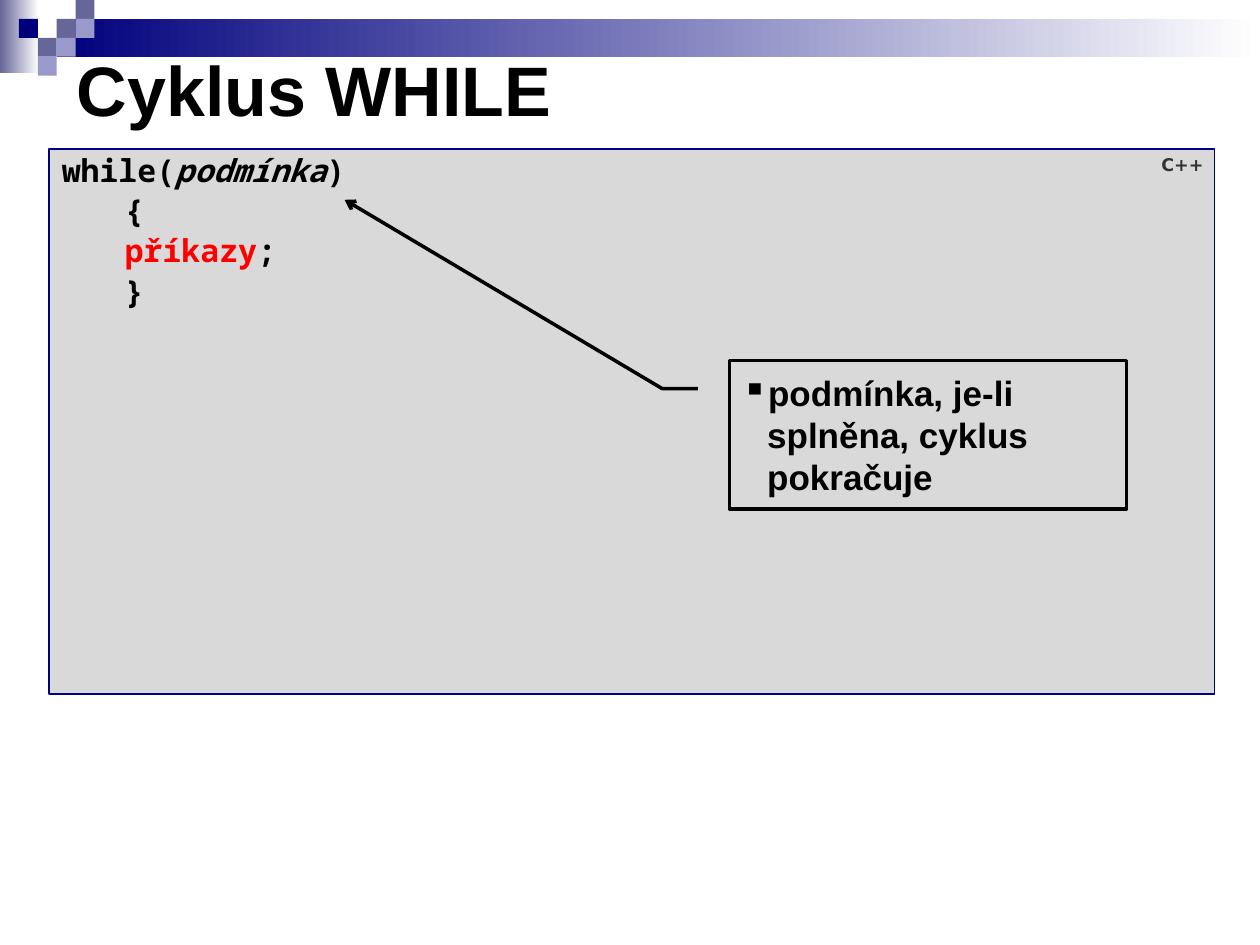
from dataclasses import dataclass

import lxml.etree
import pptx
import pptx.dml.color
import pptx.enum.shapes
import pptx.enum.text
import pptx.oxml.ns
import pptx.util

Inches = pptx.util.Inches
Pt = pptx.util.Pt
MSO_SHAPE = pptx.enum.shapes.MSO_SHAPE
ALIGN = pptx.enum.text.PP_ALIGN
ANCHOR = pptx.enum.text.MSO_ANCHOR
qn = pptx.oxml.ns.qn


@dataclass(frozen=True)
class Theme:
    navy: str = "00007D"
    border: str = "000080"
    slate: str = "666699"
    lilac: str = "9999CC"
    white: str = "FFFFFF"
    panel: str = "D9D9D9"
    ink: str = "000000"
    muted: str = "333333"
    accent: str = "FF0000"
    sans: str = "Arial"
    mono: str = "Noto Sans Mono"
    label: str = "DejaVu Sans"
    title_size: int = 40
    note_size: int = 20
    code_size: int = 18
    label_size: int = 10


@dataclass(frozen=True)
class Box:
    left: float
    top: float
    width: float
    height: float

    def lengths(self) -> list:
        return [Inches(v) for v in (self.left, self.top, self.width, self.height)]


@dataclass(frozen=True)
class Band:
    box: Box
    start: str


@dataclass(frozen=True)
class Square:
    col: int
    row: int
    color: str


@dataclass(frozen=True)
class CodeRun:
    text: str
    color: str
    italic: bool = False


@dataclass(frozen=True)
class CodeLine:
    runs: tuple
    level: int = 0


THEME = Theme()
CELL = 0.15
BANDS = (
    Band(Box(0, 0, 0.31, 0.58), THEME.slate),
    Band(Box(0.45, 0.15, 9.55, 0.3), THEME.navy),
)
SQUARES = (
    Square(3, 1, THEME.slate),
    Square(4, 0, THEME.slate),
    Square(4, 1, THEME.lilac),
    Square(2, 2, THEME.slate),
    Square(1, 1, THEME.navy),
    Square(3, 2, THEME.lilac),
    Square(2, 3, THEME.lilac),
)
CODE = (
    CodeLine((CodeRun("while(", THEME.ink), CodeRun("podmínka", THEME.ink, True),
              CodeRun(")", THEME.ink))),
    CodeLine((CodeRun("{", THEME.ink),), 1),
    CodeLine((CodeRun("příkazy", THEME.accent), CodeRun(";", THEME.ink)), 1),
    CodeLine((CodeRun("}", THEME.ink),), 1),
)


def rgb(color: str):
    return pptx.dml.color.RGBColor.from_string(color)


def style_run(r, size: int, font: str, color: str, italic: bool = False) -> None:
    r.font.size = Pt(size)
    r.font.name = font
    r.font.color.rgb = rgb(color)
    r.font.bold = True
    r.font.italic = italic


def set_indent(p, margin: float, hanging: float, bullet: str = "") -> None:
    pPr = p._p.get_or_add_pPr()
    pPr.set("marL", str(Inches(margin)))
    pPr.set("indent", str(-Inches(hanging)))
    if bullet:
        lxml.etree.SubElement(pPr, qn("a:buChar")).set("char", bullet)
    else:
        lxml.etree.SubElement(pPr, qn("a:buNone"))


def outline(sp, fill: str, line: str, width: float) -> None:
    sp.fill.solid()
    sp.fill.fore_color.rgb = rgb(fill)
    sp.line.color.rgb = rgb(line)
    sp.line.width = Pt(width)


def place(sp, box: Box) -> None:
    sp.left, sp.top, sp.width, sp.height = box.lengths()


def add_plain_rect(s, box: Box):
    sp = s.shapes.add_shape(MSO_SHAPE.RECTANGLE, *box.lengths())
    sp.shadow.inherit = False
    sp.line.fill.background()
    return sp


def add_band(s, band: Band) -> None:
    sp = add_plain_rect(s, band.box)
    sp.fill.gradient()
    sp.fill.gradient_angle = 0
    for stop, color in zip(sp.fill.gradient_stops, (band.start, THEME.white)):
        stop.color.rgb = rgb(color)


def add_square(s, square: Square) -> None:
    sp = add_plain_rect(s, Box(square.col * CELL, square.row * CELL, CELL, CELL))
    sp.fill.solid()
    sp.fill.fore_color.rgb = rgb(square.color)


def fill_title(sp, text: str) -> None:
    place(sp, Box(0.51, 0.31, 9.17, 0.79))
    tf = sp.text_frame
    tf.text = text
    tf.auto_size = pptx.enum.text.MSO_AUTO_SIZE.NONE
    tf.vertical_anchor = ANCHOR.MIDDLE
    p = tf.paragraphs[0]
    p.alignment = ALIGN.LEFT
    style_run(p.runs[0], THEME.title_size, THEME.sans, THEME.ink)


def fill_code(sp, lines: tuple) -> None:
    place(sp, Box(0.39, 1.18, 9.25, 4.33))
    outline(sp, THEME.panel, THEME.border, 1)
    tf = sp.text_frame
    tf.auto_size = pptx.enum.text.MSO_AUTO_SIZE.NONE
    for i, line in enumerate(lines):
        p = tf.add_paragraph() if i else tf.paragraphs[0]
        p.level = line.level
        p.line_spacing = 0.9
        set_indent(p, 0.54 + 0.5 * line.level, 0.54)
        for run in line.runs:
            r = p.add_run()
            r.text = run.text
            style_run(r, THEME.code_size, THEME.mono, run.color, run.italic)


def add_language_label(s, text: str) -> None:
    tf = s.shapes.add_textbox(*Box(8.78, 1.19, 0.87, 0.24).lengths()).text_frame
    tf.word_wrap = True
    tf.text = text
    p = tf.paragraphs[0]
    p.alignment = ALIGN.RIGHT
    p.line_spacing = 0.9
    style_run(p.runs[0], THEME.label_size, THEME.label, THEME.muted)


def add_callout(s, text: str) -> None:
    sp = s.shapes.add_shape(MSO_SHAPE.LINE_CALLOUT_2, *Box(5.79, 2.86, 3.15, 1.18).lengths())
    sp.shadow.inherit = False
    for i, value in enumerate((0.19, -0.08, 0.19, -0.17, -1.08, -0.97)):
        sp.adjustments[i] = value
    outline(sp, THEME.panel, THEME.ink, 2)
    lxml.etree.SubElement(sp.line._get_or_add_ln(), qn("a:tailEnd")).set("type", "arrow")
    tf = sp.text_frame
    tf.word_wrap = True
    tf.vertical_anchor = ANCHOR.MIDDLE
    tf.text = text
    p = tf.paragraphs[0]
    p.alignment = ALIGN.LEFT
    p.space_after = Pt(6)
    set_indent(p, 0.2, 0.2, "▪")
    style_run(p.runs[0], THEME.note_size, THEME.sans, THEME.ink)


def main() -> None:
    prs = pptx.Presentation()
    prs.slide_width, prs.slide_height = Inches(10), Inches(7.5)
    s = prs.slides.add_slide(prs.slide_layouts[1])
    for band in BANDS:
        add_band(s, band)
    for square in SQUARES:
        add_square(s, square)
    fill_title(s.shapes.title, "Cyklus WHILE")
    fill_code(s.placeholders[1], CODE)
    add_language_label(s, "C++")
    add_callout(s, "podmínka, je-li splněna, cyklus pokračuje")
    prs.save("out.pptx")


if __name__ == "__main__":
    main()
